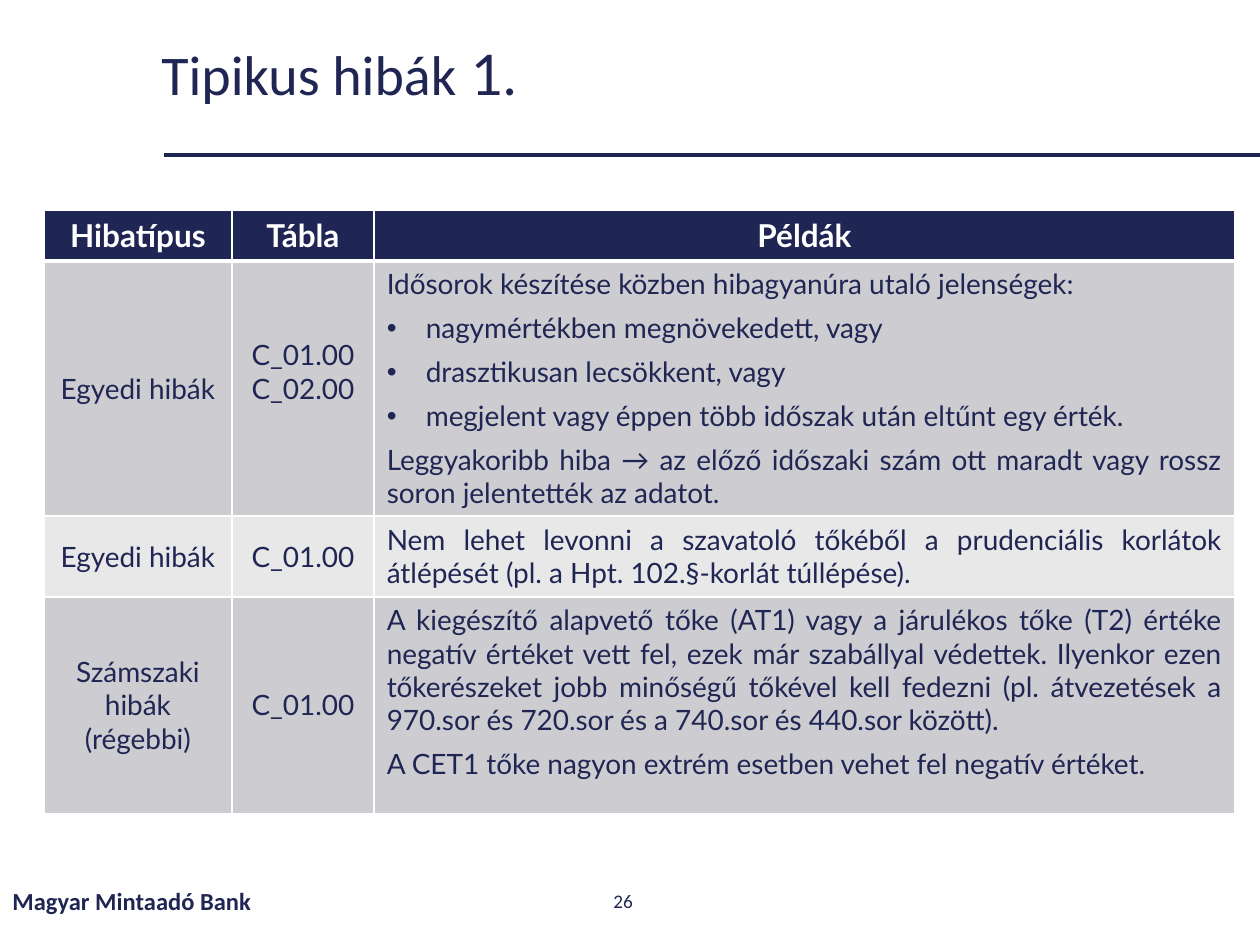
from dataclasses import dataclass

from lxml.etree import SubElement
from pptx import Presentation
from pptx.dml.color import RGBColor
from pptx.enum.shapes import MSO_CONNECTOR
from pptx.enum.text import MSO_ANCHOR, PP_ALIGN
from pptx.oxml.ns import qn
from pptx.util import Inches, Length, Pt

NAVY = RGBColor(0x20, 0x26, 0x53)
RULE_NAVY = RGBColor(0x1E, 0x24, 0x52)
WHITE = RGBColor(0xFF, 0xFF, 0xFF)
DARK_BAND = RGBColor(0xCD, 0xCD, 0xD1)
LIGHT_BAND = RGBColor(0xE8, 0xE8, 0xE9)

COLUMN_WIDTHS = (1.49, 1.13, 6.83)
HEADINGS = ("Hibatípus", "Tábla", "Példák")
HEADER_HEIGHT = 0.4


@dataclass(frozen=True)
class Line:
    text: str
    space_after: int = 0
    bullet: bool = False


@dataclass(frozen=True)
class ErrorRow:
    height: float
    kind: str
    sheets: tuple[str, ...]
    examples: tuple[Line, ...]
    sheets_bottom: float = 0.05


ROWS = (
    ErrorRow(1.88, "Egyedi hibák", ("C_01.00", "C_02.00"), (
        Line("Idősorok készítése közben hibagyanúra utaló jelenségek:", 6),
        Line("nagymértékben megnövekedett, vagy", 6, True),
        Line("drasztikusan lecsökkent, vagy", 6, True),
        Line("megjelent vagy éppen több időszak után eltűnt egy érték.", 6, True),
        Line("Leggyakoribb hiba → az előző időszaki szám ott maradt vagy rossz "
             "soron jelentették az adatot.", 6),
    ), sheets_bottom=0.32),
    ErrorRow(0.64, "Egyedi hibák", ("C_01.00",), (
        Line("Nem lehet levonni a szavatoló tőkéből a prudenciális korlátok "
             "átlépését (pl. a Hpt. 102.§-korlát túllépése)."),
    )),
    ErrorRow(1.72, "Számszaki hibák (régebbi)", ("C_01.00",), (
        Line("A kiegészítő alapvető tőke (AT1) vagy a járulékos tőke (T2) értéke "
             "negatív értéket vett fel, ezek már szabállyal védettek. Ilyenkor ezen "
             "tőkerészeket jobb minőségű tőkével kell fedezni (pl. átvezetések a "
             "970.sor és 720.sor és a 740.sor és 440.sor között).", 6),
        Line("A CET1 tőke nagyon extrém esetben vehet fel negatív értéket."),
    )),
)


def set_font(font, size: int, color: RGBColor, name: str | None = None,
             bold: bool = False) -> None:
    font.size = Pt(size)
    font.color.rgb = color
    font.bold = bold
    if name:
        font.name = name


def add_bullet(paragraph, indent: Length) -> None:
    properties = paragraph._p.get_or_add_pPr()
    properties.set("marL", str(indent))
    properties.set("indent", str(-indent))
    SubElement(properties, qn("a:buFont"), typeface="Arial")
    SubElement(properties, qn("a:buChar"), char="•")


def style_cell(cell, fill: RGBColor, top: float = 1, bottom: float = 1) -> None:
    """Give the cell white borders (widths in points) and a solid fill."""
    properties = cell._tc.get_or_add_tcPr()
    for side, width in (("L", 1), ("R", 1), ("T", top), ("B", bottom)):
        border = SubElement(properties, qn(f"a:ln{side}"), w=str(Pt(width)))
        border_fill = SubElement(border, qn("a:solidFill"))
        SubElement(border_fill, qn("a:srgbClr"), val=str(WHITE))
    cell.fill.solid()
    cell.fill.fore_color.rgb = fill


def write_cell(cell, lines: tuple[Line, ...], alignment: PP_ALIGN, size: int = 16,
               color: RGBColor = NAVY, bold: bool = False) -> None:
    frame = cell.text_frame
    for index, line in enumerate(lines):
        paragraph = frame.add_paragraph() if index else frame.paragraphs[0]
        paragraph.text = line.text
        paragraph.alignment = alignment
        if line.space_after:
            paragraph.space_after = Pt(line.space_after)
        if line.bullet:
            add_bullet(paragraph, Inches(0.31))
        set_font(paragraph.font, size, color, "Lato", bold)


def add_title(slide) -> None:
    title = slide.shapes.title
    title.left, title.top = Inches(1.18), Inches(0.2)
    title.width, title.height = Inches(8.19), Inches(0.83)
    title.text_frame.vertical_anchor = MSO_ANCHOR.MIDDLE
    paragraph = title.text_frame.paragraphs[0]
    paragraph.alignment = PP_ALIGN.JUSTIFY
    paragraph.line_spacing = 0.9
    set_font(paragraph.font, 32, NAVY)
    for text, font_name in (("Tipikus hibák", "Calibri"), (" 1.", "Lato")):
        run = paragraph.add_run()
        run.text = text
        run.font.name = font_name


def add_rule(slide) -> None:
    rule = slide.shapes.add_connector(
        MSO_CONNECTOR.STRAIGHT, Inches(1.3), Inches(1.23), Inches(10), Inches(1.23))
    rule.line.color.rgb = RULE_NAVY
    rule.line.width = Pt(2.25)
    SubElement(rule._element.spPr, qn("a:effectLst"))


def add_error_table(slide) -> None:
    heights = (HEADER_HEIGHT, *(row.height for row in ROWS))
    table = slide.shapes.add_table(
        len(heights), len(COLUMN_WIDTHS), Inches(0.35), Inches(1.67),
        Inches(sum(COLUMN_WIDTHS)), Inches(sum(heights))).table
    for column, width in zip(table.columns, COLUMN_WIDTHS):
        column.width = Inches(width)
    for table_row, height in zip(table.rows, heights):
        table_row.height = Inches(height)

    for cell, heading in zip(table.rows[0].cells, HEADINGS):
        style_cell(cell, NAVY, bottom=3)
        write_cell(cell, (Line(heading),), PP_ALIGN.CENTER, 18, WHITE, True)

    for index, row in enumerate(ROWS):
        kind, sheets, examples = table.rows[index + 1].cells
        for cell in (kind, sheets, examples):
            style_cell(cell, LIGHT_BAND if index % 2 else DARK_BAND,
                       top=1 if index else 3)
        kind.vertical_anchor = sheets.vertical_anchor = MSO_ANCHOR.MIDDLE
        sheets.margin_bottom = Inches(row.sheets_bottom)
        write_cell(kind, (Line(row.kind),), PP_ALIGN.CENTER)
        write_cell(sheets, tuple(map(Line, row.sheets)), PP_ALIGN.CENTER)
        write_cell(examples, row.examples, PP_ALIGN.JUSTIFY)


def add_footer(slide, text: str, left: float, width: float, size: int,
               alignment: PP_ALIGN, bold: bool = False) -> None:
    box = slide.shapes.add_textbox(
        Inches(left), Inches(6.95), Inches(width), Inches(0.4))
    frame = box.text_frame
    frame.word_wrap = True
    frame.vertical_anchor = MSO_ANCHOR.MIDDLE
    paragraph = frame.paragraphs[0]
    paragraph.text = text
    paragraph.alignment = alignment
    set_font(paragraph.font, size, NAVY, "Calibri", bold)


def main() -> None:
    presentation = Presentation()
    presentation.slide_width, presentation.slide_height = Inches(10), Inches(7.5)
    slide = presentation.slides.add_slide(presentation.slide_layouts[5])
    add_rule(slide)
    add_title(slide)
    add_error_table(slide)
    add_footer(slide, "26", 3.82, 2.25, 11, PP_ALIGN.CENTER)
    add_footer(slide, "Magyar Mintaadó Bank", 0, 3.38, 14, PP_ALIGN.LEFT, True)
    presentation.save("out.pptx")


if __name__ == "__main__":
    main()
